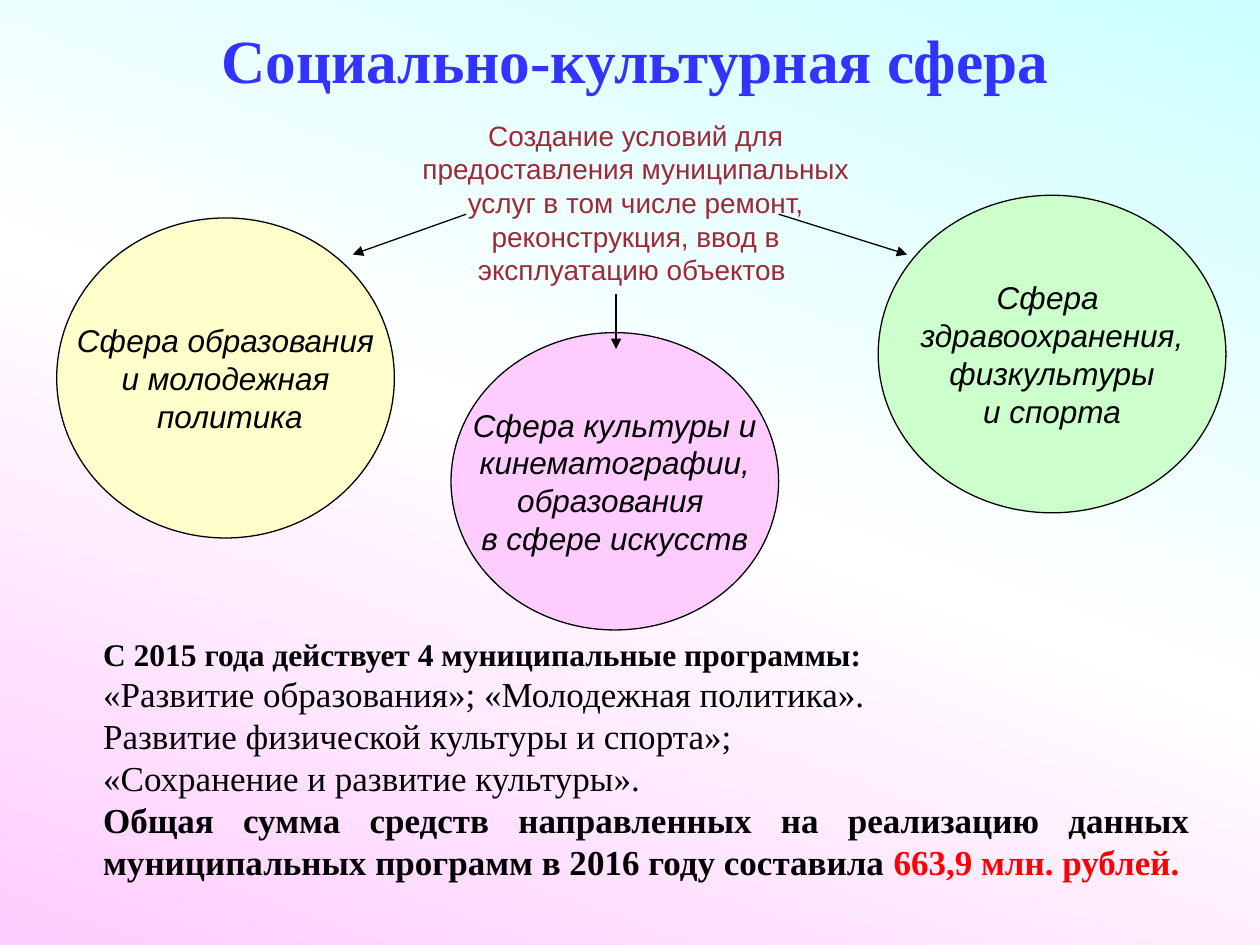
from copy import deepcopy

from lxml.etree import SubElement
from pptx import Presentation
from pptx.dml.color import RGBColor
from pptx.enum.shapes import MSO_CONNECTOR, MSO_SHAPE
from pptx.enum.text import MSO_ANCHOR, MSO_AUTO_SIZE, PP_ALIGN
from pptx.oxml.ns import qn
from pptx.util import Inches, Pt

SERIF, SANS = "Times New Roman", "Arial"
BLACK = "000000"

SPHERES = [
    ((6.97, 1.55, 2.76, 2.52), "CCFFCC",
     ["Сфера ", "здравоохранения,", "физкультуры", "и спорта"]),
    ((0.45, 1.73, 2.68, 2.54), "FFFFCC",
     ["Сфера образования", "и молодежная", " политика"]),
    ((3.58, 2.64, 2.6, 2.36), "FFCCFF",
     ["Сфера культуры и", " кинематографии, ", "образования ", "в сфере искусств"]),
]
ARROWS = [
    ((3.7, 1.7), (2.8, 2.02)),
    ((4.89, 2.33), (4.89, 2.77)),
    ((6.18, 1.7), (7.2, 2.02)),
]
PROGRAMS = [
    "«Развитие образования»; «Молодежная политика».",
    "Развитие физической культуры и спорта»;",
    "«Сохранение и развитие культуры».",
]


def color(hex_string):
    return RGBColor.from_string(hex_string)


def inches(values):
    return [Inches(value) for value in values]


def style(paragraph, font, size, hex_color=BLACK, bold=False, italic=False,
          align=PP_ALIGN.LEFT):
    paragraph.alignment = align
    paragraph.font.name = font
    paragraph.font.size = Pt(size)
    paragraph.font.color.rgb = color(hex_color)
    paragraph.font.bold = bold
    paragraph.font.italic = italic


def add_paragraphs(frame, texts):
    """Fill an empty frame with one paragraph for each text."""
    frame.text = "\n".join(texts)
    return frame.paragraphs


def add_text_box(slide, box):
    frame = slide.shapes.add_textbox(*inches(box)).text_frame
    frame.word_wrap = True
    frame.auto_size = MSO_AUTO_SIZE.SHAPE_TO_FIT_TEXT
    return frame


def set_background(slide, hex_colors, angle):
    fill = slide.background.fill
    fill.gradient()
    fill.gradient_angle = angle
    stop_list = slide.element.find(".//" + qn("a:gsLst"))
    while len(stop_list) < len(hex_colors):
        stop_list.append(deepcopy(stop_list[0]))
    for index, (stop, hex_color) in enumerate(zip(fill.gradient_stops, hex_colors)):
        stop.position = index / (len(hex_colors) - 1)
        stop.color.rgb = color(hex_color)


def add_heading(slide, box, text, **font_style):
    paragraph = add_paragraphs(add_text_box(slide, box), [text])[0]
    style(paragraph, align=PP_ALIGN.CENTER, **font_style)


def add_sphere(slide, box, hex_color, lines):
    shape = slide.shapes.add_shape(MSO_SHAPE.OVAL, *inches(box))
    shape.shadow.inherit = False
    shape.fill.solid()
    shape.fill.fore_color.rgb = color(hex_color)
    shape.line.color.rgb = color(BLACK)
    shape.line.width = Pt(0.75)
    frame = shape.text_frame
    frame.word_wrap = False
    frame.vertical_anchor = MSO_ANCHOR.MIDDLE
    for paragraph in add_paragraphs(frame, lines):
        style(paragraph, SANS, 18, italic=True, align=PP_ALIGN.CENTER)


def add_arrow(slide, start, end):
    connector = slide.shapes.add_connector(
        MSO_CONNECTOR.STRAIGHT, *inches(start + end))
    connector.line.color.rgb = color(BLACK)
    connector.line.width = Pt(0.75)
    SubElement(connector.line._get_or_add_ln(), qn("a:tailEnd"), type="triangle")
    SubElement(connector.element.spPr, qn("a:effectLst"))


def add_summary(slide, box):
    lead, *programs, total = add_paragraphs(add_text_box(slide, box), [
        "С 2015 года действует 4 муниципальные программы:",
        *PROGRAMS,
        "Общая сумма средств направленных на реализацию данных "
        "муниципальных программ в 2016 году составила ",
    ])
    style(lead, SERIF, 18, bold=True)
    for paragraph in programs:
        style(paragraph, SERIF, 20)
    style(total, SERIF, 20, bold=True, align=PP_ALIGN.JUSTIFY)
    amount = total.add_run()
    amount.text = "663,9 млн. рублей. "
    amount.font.color.rgb = color("FF0000")


def main():
    presentation = Presentation()
    presentation.slide_width, presentation.slide_height = inches((10, 7.5))
    slide = presentation.slides.add_slide(presentation.slide_layouts[6])
    set_background(slide, ["CCFFFF", "FFFFFF", "FFCCFF"], 250)
    add_heading(slide, (0.16, 0.13, 9.76, 0.69), "Социально-культурная сфера",
                font=SERIF, size=35, hex_color="3333FF", bold=True)
    for box, hex_color, lines in SPHERES:
        add_sphere(slide, box, hex_color, lines)
    add_heading(slide, (3.12, 0.89, 3.85, 1.45),
                "Создание условий для предоставления муниципальных услуг в том "
                "числе ремонт, реконструкция, ввод в эксплуатацию объектов ",
                font=SANS, size=16, hex_color="9F2936")
    for start, end in ARROWS:
        add_arrow(slide, start, end)
    add_summary(slide, (0.72, 4.99, 8.82, 2.09))
    presentation.save("out.pptx")


if __name__ == "__main__":
    main()
